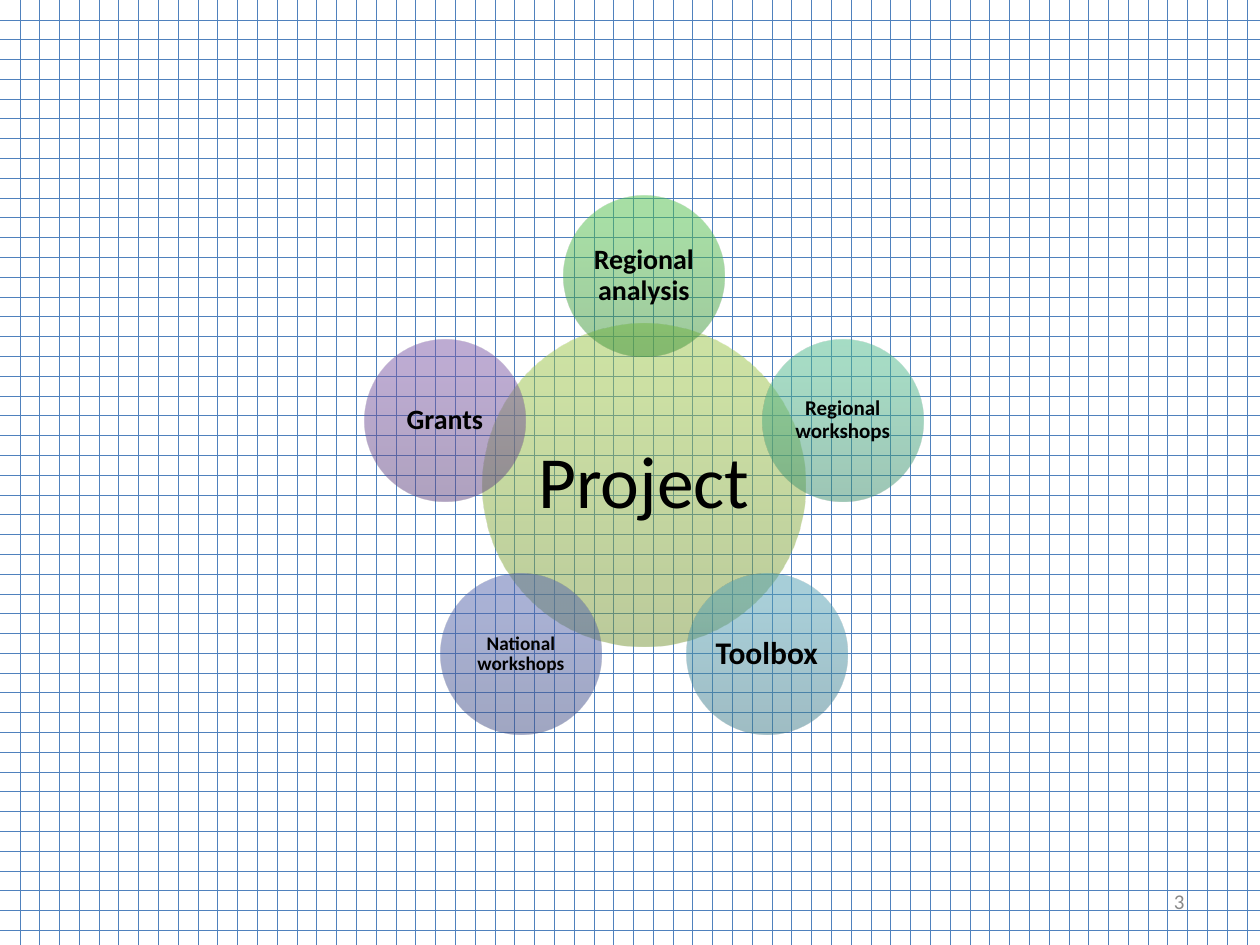
"""Build a slide with a Project circle ringed by five activity circles."""
from math import cos, radians, sin

from lxml import etree
from pptx import Presentation
from pptx.dml.color import RGBColor
from pptx.enum.dml import MSO_PATTERN
from pptx.enum.shapes import MSO_SHAPE
from pptx.enum.text import MSO_ANCHOR, PP_ALIGN
from pptx.oxml.ns import qn
from pptx.util import Inches, Pt

CIRCLE = MSO_SHAPE.OVAL
DOT_GRID = MSO_PATTERN.DOTTED_GRID
MIDDLE = MSO_ANCHOR.MIDDLE
CENTER, RIGHT = PP_ALIGN.CENTER, PP_ALIGN.RIGHT

BLUE = RGBColor(0x4F, 0x81, 0xBD)
WHITE = RGBColor(0xFF, 0xFF, 0xFF)
BLACK = RGBColor(0x00, 0x00, 0x00)
GRAY = RGBColor(0x89, 0x89, 0x89)
LIME = [RGBColor(0x77, 0x97, 0x37), RGBColor(0x9B, 0xC3, 0x48), RGBColor(0x9D, 0xC7, 0x46)]
GREEN = [RGBColor(0x3E, 0x92, 0x3A), RGBColor(0x50, 0xBE, 0x4B), RGBColor(0x4F, 0xC1, 0x49)]
TEAL = [RGBColor(0x3C, 0x8E, 0x6B), RGBColor(0x4E, 0xB8, 0x8B), RGBColor(0x4C, 0xBB, 0x8C)]
CYAN = [RGBColor(0x3F, 0x7A, 0x89), RGBColor(0x51, 0x9F, 0xB2), RGBColor(0x50, 0xA0, 0xB5)]
INDIGO = [RGBColor(0x41, 0x4D, 0x85), RGBColor(0x54, 0x64, 0xAC), RGBColor(0x53, 0x63, 0xAF)]
PURPLE = [RGBColor(0x5F, 0x44, 0x80), RGBColor(0x7B, 0x58, 0xA6), RGBColor(0x7C, 0x57, 0xA8)]

STOPS = [0, 80, 100]
OPACITY = 50
HUB_X, HUB_Y = 5.11, 3.85
HUB_SIZE = 2.56
SATELLITE_SIZE = HUB_SIZE / 2
ORBIT = 1.66

SATELLITES = [
    ("Regional analysis", 16, GREEN, 0.02),
    ("Regional workshops", 12, TEAL, 0.02),
    ("Toolbox", 18, CYAN, 0.03),
    ("National workshops", 11, INDIGO, 0.02),
    ("Grants", 16, PURPLE, 0.02),
]


def write(box, text, align, margin, line_spacing, font):
    frame = box.text_frame
    frame.word_wrap = True
    frame.vertical_anchor = MIDDLE
    for side, value in margin.items():
        setattr(frame, f"margin_{side}", Inches(value))
    para = frame.paragraphs[0]
    para.alignment = align
    para.line_spacing = line_spacing
    span = para.add_run()
    span.text = text
    span.font.color.rgb = font.pop("color")
    for name, value in font.items():
        setattr(span.font, name, value)


def add_circle(group, x, y, size, text, points, colors, margin, bold):
    circle = group.shapes.add_shape(
        CIRCLE, Inches(x - size / 2), Inches(y - size / 2), Inches(size), Inches(size))
    circle.shadow.inherit = False
    circle.line.fill.background()
    circle.fill.gradient()
    circle.fill.gradient_angle = 90
    stops = circle._element.spPr.find(".//" + qn("a:gsLst"))
    for stop in list(stops):
        stops.remove(stop)
    for position, color in zip(STOPS, colors):
        stop = etree.SubElement(stops, qn("a:gs"), pos=str(position * 1000))
        tint = etree.SubElement(stop, qn("a:srgbClr"), val=str(color))
        etree.SubElement(tint, qn("a:alpha"), val=str(OPACITY * 1000))
    margins = dict.fromkeys(["left", "top", "right", "bottom"], margin)
    write(circle, text, CENTER, margins, 0.9,
          {"name": "Calibri", "size": Pt(points), "bold": bold, "color": BLACK})


deck = Presentation()
deck.slide_width, deck.slide_height = Inches(10), Inches(7.5)
page = deck.slides.add_slide(deck.slide_layouts[6])

backdrop = page.background.fill
backdrop.patterned()
backdrop.pattern = DOT_GRID
backdrop.fore_color.rgb = BLUE
backdrop.back_color.rgb = WHITE

number = page.shapes.add_textbox(Inches(7.17), Inches(6.95), Inches(2.33), Inches(0.4))
write(number, "3", RIGHT, {}, 1.0, {"name": "Calibri", "size": Pt(12), "color": GRAY})

diagram = page.shapes.add_group_shape()
add_circle(diagram, HUB_X, HUB_Y, HUB_SIZE, "Project", 42, LIME, 0.06, False)
for index, (label, points, colors, margin) in enumerate(SATELLITES):
    angle = radians(index * 360 / len(SATELLITES) - 90)
    add_circle(diagram, HUB_X + ORBIT * cos(angle), HUB_Y + ORBIT * sin(angle),
               SATELLITE_SIZE, label, points, colors, margin, True)

deck.save("out.pptx")
